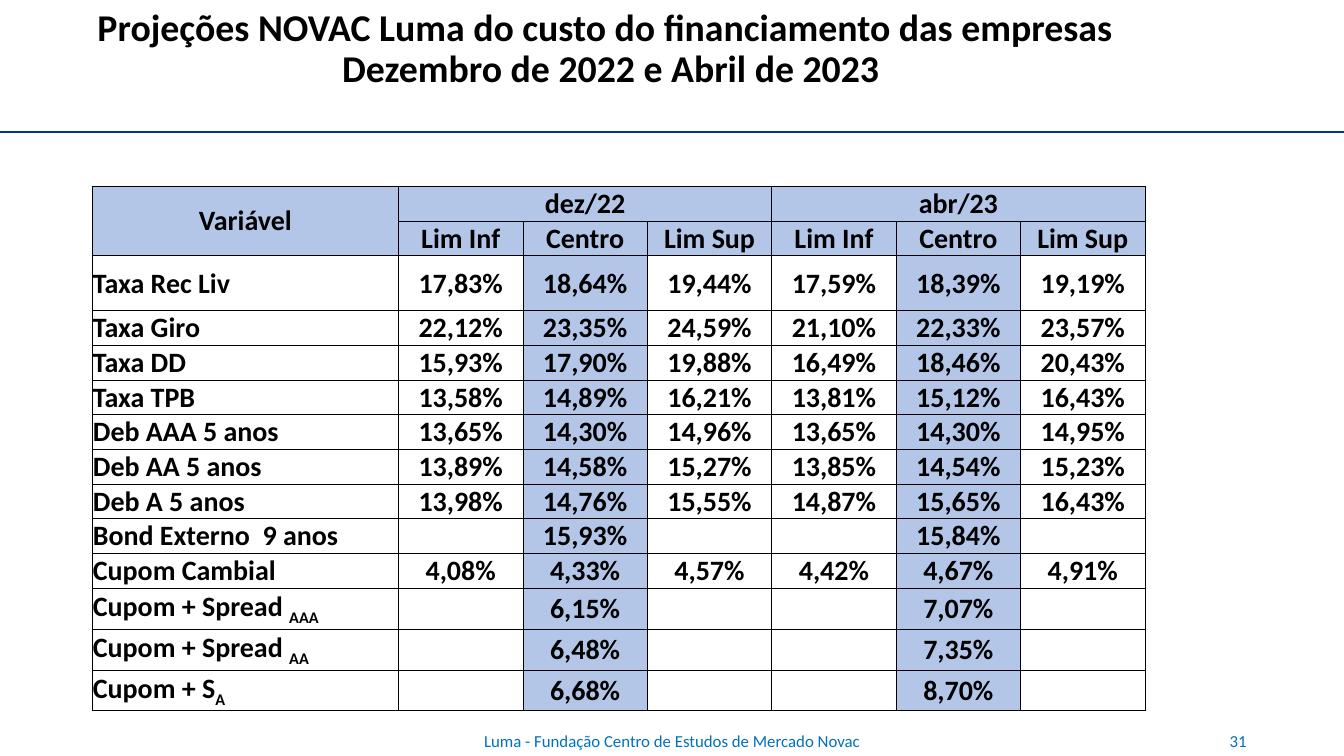
import pptx
import pptx.dml.color
import pptx.enum.shapes
import pptx.enum.text
import pptx.oxml
import pptx.oxml.ns
import pptx.util
import lxml.etree

PX = 9525  # EMU per px, 96 px to the inch
BLACK = pptx.dml.color.RGBColor(0x00, 0x00, 0x00)
RULE_BLUE = pptx.dml.color.RGBColor(0x00, 0x33, 0x99)
FOOTER_BLUE = pptx.dml.color.RGBColor(0x00, 0x70, 0xC0)
HEADER_FILL = pptx.dml.color.RGBColor(0xB4, 0xC6, 0xE7)
ALIGN = pptx.enum.text.PP_ALIGN
ANCHOR = pptx.enum.text.MSO_ANCHOR


def add_text(paragraph, text, size, color, bold=False):
    run = paragraph.add_run()
    run.text = text
    formats = {"name": "Calibri", "size": pptx.util.Pt(size), "bold": bold}
    for attribute, value in formats.items():
        setattr(run.font, attribute, value)
    run.font.color.rgb = color
    return run


def add_borders(cell):
    properties = cell._tc.get_or_add_tcPr()
    for side in ("lnL", "lnR", "lnT", "lnB"):
        properties.append(pptx.oxml.parse_xml(
            f'<a:{side} {pptx.oxml.ns.nsdecls("a")} w="12700"><a:solidFill>'
            f'<a:srgbClr val="{BLACK}"/></a:solidFill></a:{side}>'))


presentation = pptx.Presentation()
presentation.slide_width = 2560 * PX
presentation.slide_height = 1440 * PX
slide = presentation.slides.add_slide(presentation.slide_layouts[5])

# Rule under the title
rule = slide.shapes.add_connector(
    pptx.enum.shapes.MSO_CONNECTOR.STRAIGHT, 0, 252 * PX, 2560 * PX, 252 * PX)
rule.line.color.rgb = RULE_BLUE
rule.line.width = pptx.util.Pt(3)
lxml.etree.SubElement(rule._element.spPr, pptx.oxml.ns.qn("a:effectLst"))

# Title: the second line is indented below the first
title = slide.shapes.title
for attribute, px in {"left": 176, "top": 11, "width": 2208, "height": 168}.items():
    setattr(title, attribute, px * PX)
heading = title.text_frame
heading.auto_size = pptx.enum.text.MSO_AUTO_SIZE.NONE
heading.vertical_anchor = ANCHOR.MIDDLE
title_lines = [
    ("Projeções NOVAC Luma do custo do financiamento das empresas", 0),
    ("Dezembro de 2022 e Abril de 2023", 466),
]
for index, (text, indent) in enumerate(title_lines):
    paragraph = heading.add_paragraph() if index else heading.paragraphs[0]
    paragraph.alignment = ALIGN.LEFT
    paragraph.line_spacing = 0.9
    paragraph.space_before = pptx.util.Pt(0)
    paragraph._p.get_or_add_pPr().set("marL", str(indent * PX))
    add_text(paragraph, text, 54, BLACK, True)

# Rates; "|" starts a subscript
LIMITS = ["Lim Inf", "Centro", "Lim Sup"]
rates = [
    ["Variável", "dez/22", "", "", "abr/23", "", ""],
    ["", *LIMITS, *LIMITS],
    ["Taxa Rec Liv", "17,83%", "18,64%", "19,44%", "17,59%", "18,39%", "19,19%"],
    ["Taxa Giro", "22,12%", "23,35%", "24,59%", "21,10%", "22,33%", "23,57%"],
    ["Taxa DD", "15,93%", "17,90%", "19,88%", "16,49%", "18,46%", "20,43%"],
    ["Taxa TPB", "13,58%", "14,89%", "16,21%", "13,81%", "15,12%", "16,43%"],
    ["Deb AAA 5 anos", "13,65%", "14,30%", "14,96%", "13,65%", "14,30%", "14,95%"],
    ["Deb AA 5 anos", "13,89%", "14,58%", "15,27%", "13,85%", "14,54%", "15,23%"],
    ["Deb A 5 anos", "13,98%", "14,76%", "15,55%", "14,87%", "15,65%", "16,43%"],
    ["Bond Externo  9 anos", "", "15,93%", "", "", "15,84%", ""],
    ["Cupom Cambial", "4,08%", "4,33%", "4,57%", "4,42%", "4,67%", "4,91%"],
    ["Cupom + Spread |AAA", "", "6,15%", "", "", "7,07%", ""],
    ["Cupom + Spread |AA", "", "6,48%", "", "", "7,35%", ""],
    ["Cupom + S|A", "", "6,68%", "", "", "8,70%", ""],
]
column_widths = [583] + [237] * 6
row_heights = [66] * 2 + [105] + [66] * 8 + [78] * 3
table = slide.shapes.add_table(
    len(rates), len(column_widths), 176 * PX, 355 * PX,
    sum(column_widths) * PX, sum(row_heights) * PX).table
table.first_row = False
table.horz_banding = False
for column, width in zip(table.columns, column_widths):
    column.width = width * PX
for row, height in zip(table.rows, row_heights):
    row.height = height * PX

# Merged headers
table.cell(0, 0).merge(table.cell(1, 0))
for first in (1, 4):
    table.cell(0, first).merge(table.cell(0, first + 2))

# Cells: header rows and the two centre columns are shaded
for r, values in enumerate(rates):
    for c, value in enumerate(values):
        cell = table.cell(r, c)
        add_borders(cell)
        if r < 2 or c in (2, 5):
            cell.fill.solid()
            cell.fill.fore_color.rgb = HEADER_FILL
        else:
            cell.fill.background()
        if not value:
            continue
        for side, px in {"left": 1, "right": 1, "top": 1, "bottom": 0}.items():
            setattr(cell, f"margin_{side}", px * PX)
        bottom = c > 0 and values[0].startswith("Deb")
        cell.vertical_anchor = ANCHOR.BOTTOM if bottom else ANCHOR.MIDDLE
        paragraph = cell.text_frame.paragraphs[0]
        paragraph.alignment = ALIGN.LEFT if c == 0 and r > 1 else ALIGN.CENTER
        label, _, subscript = value.partition("|")
        add_text(paragraph, label, 40, BLACK, True)
        if subscript:
            run = add_text(paragraph, subscript, 40, BLACK, True)
            run._r.get_or_add_rPr().set("baseline", "-25000")

# Footer and page number
for text, left, width, alignment in [
    ("Luma - Fundação Centro de Estudos de Mercado Novac", 848, 864, ALIGN.CENTER),
    ("31", 1808, 576, ALIGN.RIGHT),
]:
    footer = slide.shapes.add_textbox(left * PX, 1373 * PX, width * PX, 77 * PX).text_frame
    footer.word_wrap = True
    footer.vertical_anchor = ANCHOR.MIDDLE
    footer.paragraphs[0].alignment = alignment
    add_text(footer.paragraphs[0], text, 24, FOOTER_BLUE)

presentation.save("out.pptx")
